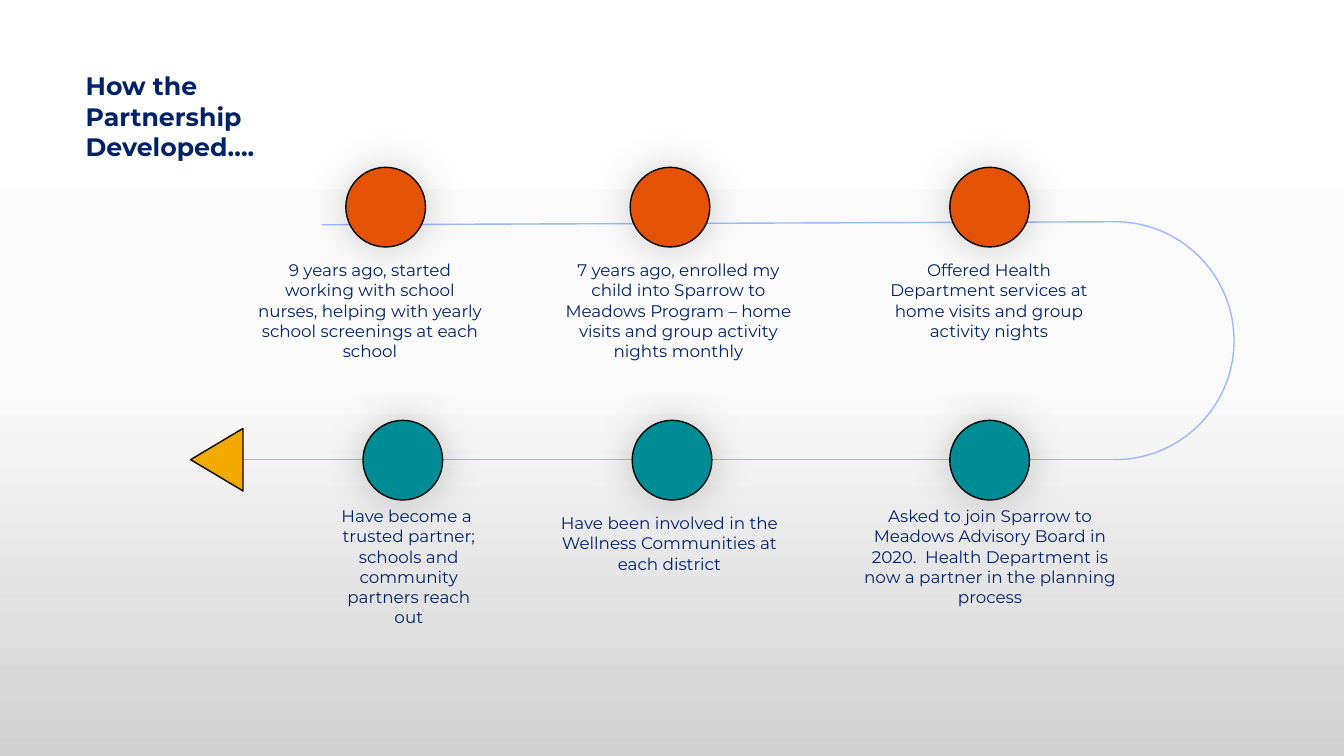
import pptx
import pptx.util
import pptx.dml.color
import pptx.enum.shapes
import pptx.enum.text
import pptx.oxml
import pptx.oxml.ns

Inches = pptx.util.Inches
Pt = pptx.util.Pt
SHAPE = pptx.enum.shapes.MSO_SHAPE
ALIGN = pptx.enum.text.PP_ALIGN
NS = pptx.oxml.ns.nsdecls("a")

NAVY, BLUE, BLACK = "012169", "9BB9FE", "080808"
ORANGE, TEAL, GOLD = "E35205", "008C95", "F2A900"
SIZE = 0.79
TOP, LOW = 1.66, 4.17

# Circle left, circle top, fill, caption box, caption paragraphs
STEPS = [
    (3.43, TOP, ORANGE, (2.45, 2.53, 2.44, 1.31),
     ["9 years ago, started working with school nurses, helping with "
      "yearly school screenings at each school"]),
    (6.25, TOP, ORANGE, (5.51, 2.53, 2.44, 1.11),
     ["7 years ago, enrolled my child into Sparrow to Meadows Program – "
      "home visits and group activity nights monthly"]),
    (9.42, TOP, ORANGE, (8.59, 2.53, 2.44, 0.91),
     ["Offered Health Department services at home visits and group "
      "activity nights"]),
    (9.42, LOW, TEAL, (8.39, 4.97, 2.86, 1.11),
     ["Asked to join Sparrow to Meadows Advisory Board in 2020.  Health "
      "Department is now a partner in the planning process"]),
    (6.27, LOW, TEAL, (5.42, 5.04, 2.44, 0.91),
     ["Have been involved in the Wellness Communities at each district"]),
    (3.6, LOW, TEAL, (3.24, 4.97, 1.63, 1.31),
     ["Have become a  trusted partner; schools and",
      "community partners reach out"]),
]


def rgb(code):
    return pptx.dml.color.RGBColor.from_string(code)


def shade(slide, stops):
    """Fill the background with a gradient running downwards."""
    fill = slide.background.fill
    fill.gradient()
    fill.gradient_angle = 270
    grad = slide.background._cSld.find(".//" + pptx.oxml.ns.qn("a:gradFill"))
    marks = "".join(
        f'<a:gs pos="{pos * 1000}"><a:srgbClr val="{code}"/></a:gs>'
        for pos, code in stops)
    old = grad.find(pptx.oxml.ns.qn("a:gsLst"))
    grad.replace(old, pptx.oxml.parse_xml(
        f"<a:gsLst {NS}>{marks}</a:gsLst>"))


def stroke(line, code):
    line.color.rgb = rgb(code)
    line.width = Pt(1)


def draw(slide, kind, box, fill, edge):
    shape = slide.shapes.add_shape(kind, *map(Inches, box))
    shape.shadow.inherit = False
    if fill:
        shape.fill.solid()
        shape.fill.fore_color.rgb = rgb(fill)
    else:
        shape.fill.background()
    stroke(shape.line, edge)
    return shape


def glow(shape):
    """Give the shape a soft shadow on all sides."""
    effects = shape._element.spPr.find(pptx.oxml.ns.qn("a:effectLst"))
    effects.append(pptx.oxml.parse_xml(
        f'<a:outerShdw {NS} blurRad="{Pt(30)}" dist="0" dir="0" '
        'algn="ctr" rotWithShape="0"><a:srgbClr val="000000">'
        '<a:alpha val="20000"/></a:srgbClr></a:outerShdw>'))


def link(slide, start, end):
    line = slide.shapes.add_connector(
        pptx.enum.shapes.MSO_CONNECTOR.STRAIGHT,
        *map(Inches, start + end))
    stroke(line.line, BLUE)
    line._element.spPr.append(pptx.oxml.parse_xml(f"<a:effectLst {NS}/>"))


def write(shape, lines, size, align, bold=False):
    frame = shape.text_frame
    frame.word_wrap = True
    frame.auto_size = pptx.enum.text.MSO_AUTO_SIZE.SHAPE_TO_FIT_TEXT
    frame.vertical_anchor = pptx.enum.text.MSO_ANCHOR.TOP
    for i, line in enumerate(lines):
        para = frame.add_paragraph() if i else frame.paragraphs[0]
        para.alignment = align
        run = para.add_run()
        run.text = line
        font = run.font
        font.name, font.size, font.bold = "Montserrat", Pt(size), bold
        font.color.rgb = rgb(NAVY)


def head(slide, box, lines):
    title = slide.shapes.title
    title.left, title.top, title.width, title.height = map(Inches, box)
    write(title, lines, 18, ALIGN.LEFT, bold=True)


def track(slide):
    """Draw the path that the steps follow."""
    arc = draw(slide, SHAPE.ARC, (9.88, 2.2, 2.36, 2.36), None, BLUE)
    arc.adjustments[0] = 162
    arc.adjustments[1] = 54.2
    link(slide, (3.19, 2.23), (11.06, 2.2))
    link(slide, (2.41, 4.56), (11.06, 4.56))
    tip = draw(slide, SHAPE.ISOSCELES_TRIANGLE, (1.84, 4.3, 0.62, 0.52),
               GOLD, BLACK)
    tip.rotation = 270


def step(slide, left, top, fill, box, lines):
    glow(draw(slide, SHAPE.OVAL, (left, top, SIZE, SIZE), fill, BLACK))
    text = slide.shapes.add_textbox(*map(Inches, box))
    write(text, lines, 12, ALIGN.CENTER)


def main():
    deck = pptx.Presentation()
    deck.slide_width, deck.slide_height = Inches(13.33), Inches(7.5)
    slide = deck.slides.add_slide(deck.slide_layouts.get_by_name("Title Only"))
    shade(slide, [(0, "FFFFFF"), (50, "FBFBFB"), (100, "D1D1D1")])
    head(slide, (0.75, 0.65, 1.89, 1.01),
         ["How the", "Partnership", "Developed…."])
    track(slide)
    for item in STEPS:
        step(slide, *item)
    deck.save("out.pptx")


if __name__ == "__main__":
    main()
